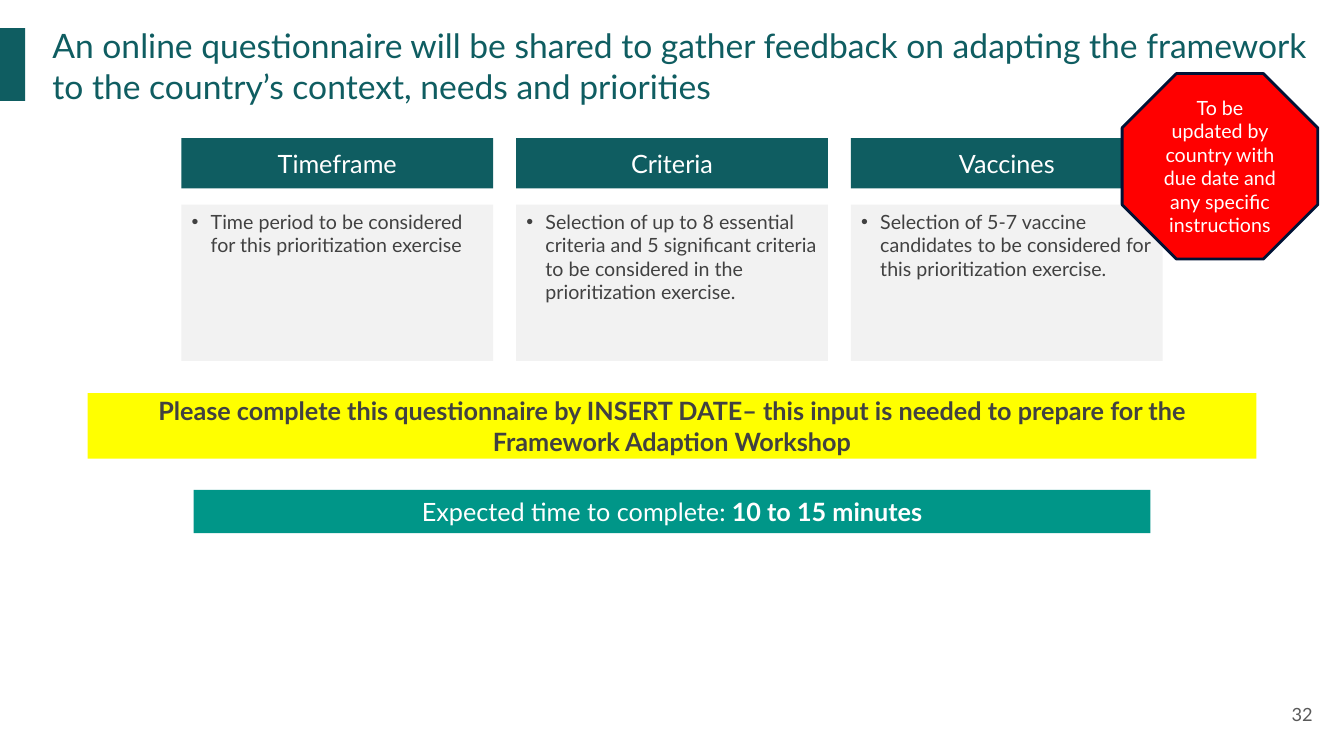
from lxml.etree import SubElement
from pptx import Presentation
from pptx.dml.color import RGBColor
from pptx.enum.shapes import MSO_SHAPE
from pptx.enum.text import MSO_ANCHOR, MSO_AUTO_SIZE, PP_ALIGN
from pptx.oxml.ns import qn
from pptx.util import Inches, Pt

FONT = "Lato"
TEAL, GREEN, YELLOW, RED, NAVY = "0F5D61", "009688", "FFFF00", "FF0000", "001235"
WHITE, PALE, DARK, GREY = "FFFFFF", "F2F2F2", "414141", "595959"

COLUMNS = [
    ("Timeframe", "Time period to be considered for this prioritization exercise"),
    ("Criteria", "Selection of up to 8 essential criteria and 5 significant criteria "
                 "to be considered in the prioritization exercise."),
    ("Vaccines", "Selection of 5-7 vaccine candidates to be considered for this "
                 "prioritization exercise."),
]
COLUMN_LEFT, COLUMN_STEP, COLUMN_WIDTH = 1.8, 3.32, 3.09


def color(hex_value):
    return RGBColor.from_string(hex_value)


def write(frame, *runs, size=18, ink=WHITE, bold=False, align=PP_ALIGN.CENTER,
          anchor=MSO_ANCHOR.MIDDLE, inset=(0.1, 0.05), bullet=False):
    frame.word_wrap = True
    frame.auto_size = MSO_AUTO_SIZE.NONE
    frame.vertical_anchor = anchor
    frame.margin_left = frame.margin_right = Inches(inset[0])
    frame.margin_top = frame.margin_bottom = Inches(inset[1])
    paragraph = frame.paragraphs[0]
    paragraph.alignment = align
    paragraph.space_before = Pt(0)
    for text, strong in runs:
        run = paragraph.add_run()
        run.text = text
        run.font.name = FONT
        run.font.size = Pt(size)
        run.font.bold = bold or strong
        run.font.color.rgb = color(ink)
    if bullet:
        properties = paragraph._p.get_or_add_pPr()
        properties.set("marL", str(Inches(0.19)))
        properties.set("indent", str(Inches(-0.19)))
        SubElement(properties, qn("a:buFont"), typeface="Arial")
        SubElement(properties, qn("a:buChar"), char="•")


class SlideBuilder:
    def __init__(self, presentation):
        self.slide = presentation.slides.add_slide(presentation.slide_layouts[4])
        self.bodies = list(self.slide.placeholders)[1:]

    def move(self, shape, box):
        shape.left, shape.top, shape.width, shape.height = map(Inches, box)

    def title(self, text, box):
        heading = self.slide.shapes.title
        self.move(heading, box)
        write(heading.text_frame, (text, False), size=24, ink=TEAL,
              align=PP_ALIGN.LEFT, anchor=MSO_ANCHOR.TOP, inset=(0, 0))

    def panel(self, box, fill, *runs, kind=MSO_SHAPE.RECTANGLE, outline=None, **style):
        panel = self.slide.shapes.add_shape(kind, *map(Inches, box))
        panel.shadow.inherit = False
        panel.fill.solid()
        panel.fill.fore_color.rgb = color(fill)
        if outline:
            panel.line.color.rgb = color(outline)
            panel.line.width = Pt(2)
        else:
            panel.line.fill.background()
        if runs:
            write(panel.text_frame, *runs, **style)

    def bullet_card(self, text, box):
        card = self.bodies.pop(0)
        self.move(card, box)
        card.fill.solid()
        card.fill.fore_color.rgb = color(PALE)
        write(card.text_frame, (text, False), size=14, ink=DARK,
              align=PP_ALIGN.LEFT, anchor=MSO_ANCHOR.TOP, bullet=True)

    def label(self, text, box, **style):
        label = self.slide.shapes.add_textbox(*map(Inches, box))
        write(label.text_frame, (text, False), **style)

    def remove_unused_bodies(self):
        for body in self.bodies:
            body.element.getparent().remove(body.element)


def main():
    presentation = Presentation()
    presentation.slide_width, presentation.slide_height = Inches(13.33), Inches(7.5)
    builder = SlideBuilder(presentation)

    builder.title("An online questionnaire will be shared to gather feedback on adapting "
                  "the framework to the country’s context, needs and priorities",
                  (0.52, 0.25, 12.55, 0.8))
    builder.panel((-0.01, 0.28, 0.26, 0.72), TEAL)
    builder.label("32", (12.35, 6.8, 0.8, 0.57), size=13, ink=GREY,
                  align=PP_ALIGN.RIGHT, inset=(0.13, 0.13))

    builder.panel((1.92, 4.86, 9.49, 0.43), GREEN,
                  ("Expected time to complete:", False), (" 10 to 15 minutes", True))
    builder.panel((0.87, 3.9, 11.59, 0.65), YELLOW,
                  ("Please complete this questionnaire by INSERT DATE– this input is "
                   "needed to prepare for the Framework Adaption Workshop", True), ink=DARK)

    for index, (topic, request) in enumerate(COLUMNS):
        left = COLUMN_LEFT + index * COLUMN_STEP
        builder.panel((left, 1.37, COLUMN_WIDTH, 0.5), TEAL, (topic, False))
        builder.bullet_card(request, (left, 2.03, COLUMN_WIDTH, 1.55))
    builder.remove_unused_bodies()

    builder.panel((11.13, 0.73, 1.94, 1.84), RED,
                  ("To be updated by country with due date and any specific instructions",
                   False), kind=MSO_SHAPE.OCTAGON, outline=NAVY, size=14)

    presentation.save("out.pptx")


if __name__ == "__main__":
    main()
